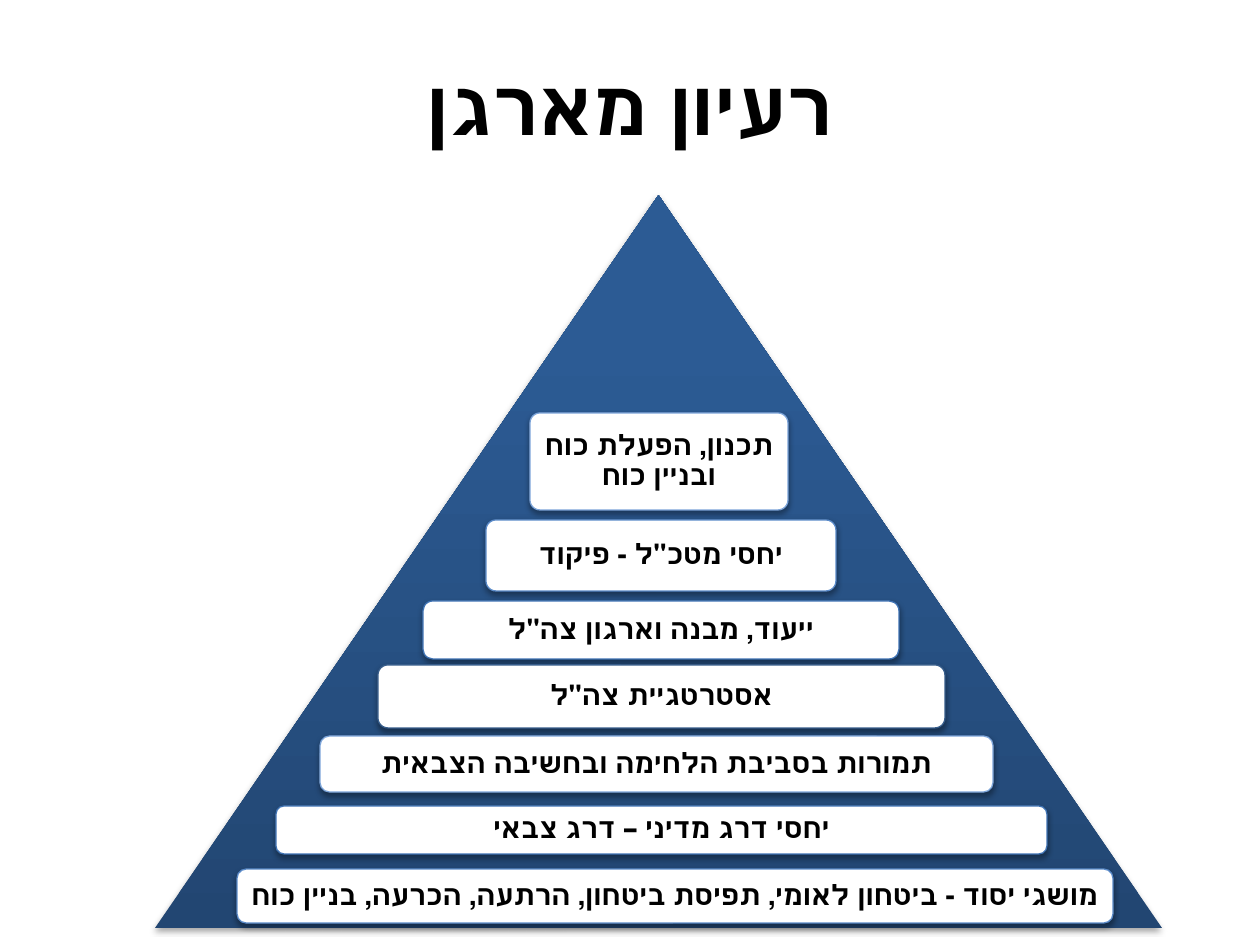
import pptx
import pptx.dml.color
import pptx.enum.lang
import pptx.enum.shapes
import pptx.enum.text
import pptx.util
from lxml import etree

TITLE = ("רעיון מארגן", (63, 26, 1134, 158))
PEAK = (155, 195, 1007, 733)
# text, (left, top, width, height), outline
TIERS = [
    ("תכנון, הפעלת כוח ובניין כוח", (530, 413, 258, 97), "pale"),
    ("יחסי מטכ\"ל - פיקוד", (486, 520, 350, 71), "mid"),
    ("ייעוד, מבנה וארגון צה\"ל", (423, 601, 476, 58), "deep"),
    ("אסטרטגיית צה\"ל", (378, 665, 567, 63), "dark"),
    ("תמורות בסביבת הלחימה ובחשיבה הצבאית", (320, 736, 673, 56), "pale"),
    ("יחסי דרג מדיני – דרג צבאי", (276, 806, 771, 48), "deep"),
    ("מושגי יסוד - ביטחון לאומי, תפיסת ביטחון, הרתעה, הכרעה, בניין כוח",
     (237, 869, 876, 54), "mid"),
]
THEME = {
    "font": "Calibri", "head": 44, "body": 16,
    "ink": "000000", "paper": "FFFFFF",
    "pale": "7CA4D9", "mid": "5B8BC9", "deep": "3F73B4", "dark": "375D8B",
    "fade": [(0, "224672"), (80, "2C5B94"), (100, "2A5B96")],
}
PX = 914400 // 126
ROUND = 10  # corner radius limit
NS = "http://schemas.openxmlformats.org/drawingml/2006/main"
SHAPE = pptx.enum.shapes.MSO_SHAPE


def sub(node, tag, **attrs):
    """Append a drawing element with the given attributes."""
    kid = etree.SubElement(node, f"{{{NS}}}{tag}")
    for key, val in attrs.items():
        kid.set(key, str(val))
    return kid


def rgb(name):
    return pptx.dml.color.RGBColor.from_string(THEME[name])


def place(shape, box):
    shape.left, shape.top, shape.width, shape.height = (n * PX for n in box)


def write(shape, text, size="body", inset=None, **spacing):
    frame = shape.text_frame
    frame.word_wrap = True
    frame.vertical_anchor = pptx.enum.text.MSO_ANCHOR.MIDDLE
    if inset is not None:
        frame.margin_left = frame.margin_right = inset * PX
        frame.margin_top = frame.margin_bottom = inset * PX
    para = frame.paragraphs[0]
    para.alignment = pptx.enum.text.PP_ALIGN.CENTER
    para._p.get_or_add_pPr().set("rtl", "1")
    for key, val in spacing.items():
        setattr(para, key, val)
    run = para.add_run()
    run.text = text
    font = run.font
    font.name, font.bold = THEME["font"], True
    font.size = pptx.util.Pt(THEME[size])
    font.color.rgb = rgb("ink")
    font.language_id = pptx.enum.lang.MSO_LANGUAGE_ID.HEBREW


def draw(slide, kind, box):
    """Add a preset shape with the soft shadow all shapes share."""
    shape = slide.shapes.add_shape(kind, *(n * PX for n in box))
    shape.shadow.inherit = False
    glow = shape._element.spPr.find(f"{{{NS}}}effectLst")
    cast = sub(glow, "outerShdw", blurRad=40000, dist=23000,
               dir=5400000, rotWithShape=0)
    tint = sub(cast, "srgbClr", val=THEME["ink"])
    sub(tint, "alpha", val=35000)
    return shape


def peak(slide):
    shape = draw(slide, SHAPE.ISOSCELES_TRIANGLE, PEAK)
    shape.line.fill.background()
    shape.fill.gradient()
    shape.fill.gradient_angle = 90
    stops = shape._element.spPr.find(f".//{{{NS}}}gsLst")
    for old in list(stops):
        stops.remove(old)
    for pos, tint in THEME["fade"]:
        sub(sub(stops, "gs", pos=pos * 1000), "srgbClr", val=tint)


def tier(slide, text, box, edge):
    shape = draw(slide, SHAPE.ROUNDED_RECTANGLE, box)
    shape.adjustments[0] = min(0.17, ROUND / box[3])
    shape.fill.solid()
    shape.fill.fore_color.rgb = rgb("paper")
    shape.line.color.rgb = rgb(edge)
    shape.line.width = pptx.util.Pt(0.75)
    write(shape, text, inset=8, line_spacing=0.9)


def main():
    deck = pptx.Presentation()
    deck.slide_width, deck.slide_height = 1260 * PX, 945 * PX
    slide = deck.slides.add_slide(deck.slide_layouts[5])
    text, box = TITLE
    place(slide.shapes.title, box)
    write(slide.shapes.title, text, size="head")
    peak(slide)
    for row in TIERS:
        tier(slide, *row)
    deck.save("out.pptx")


if __name__ == "__main__":
    main()
